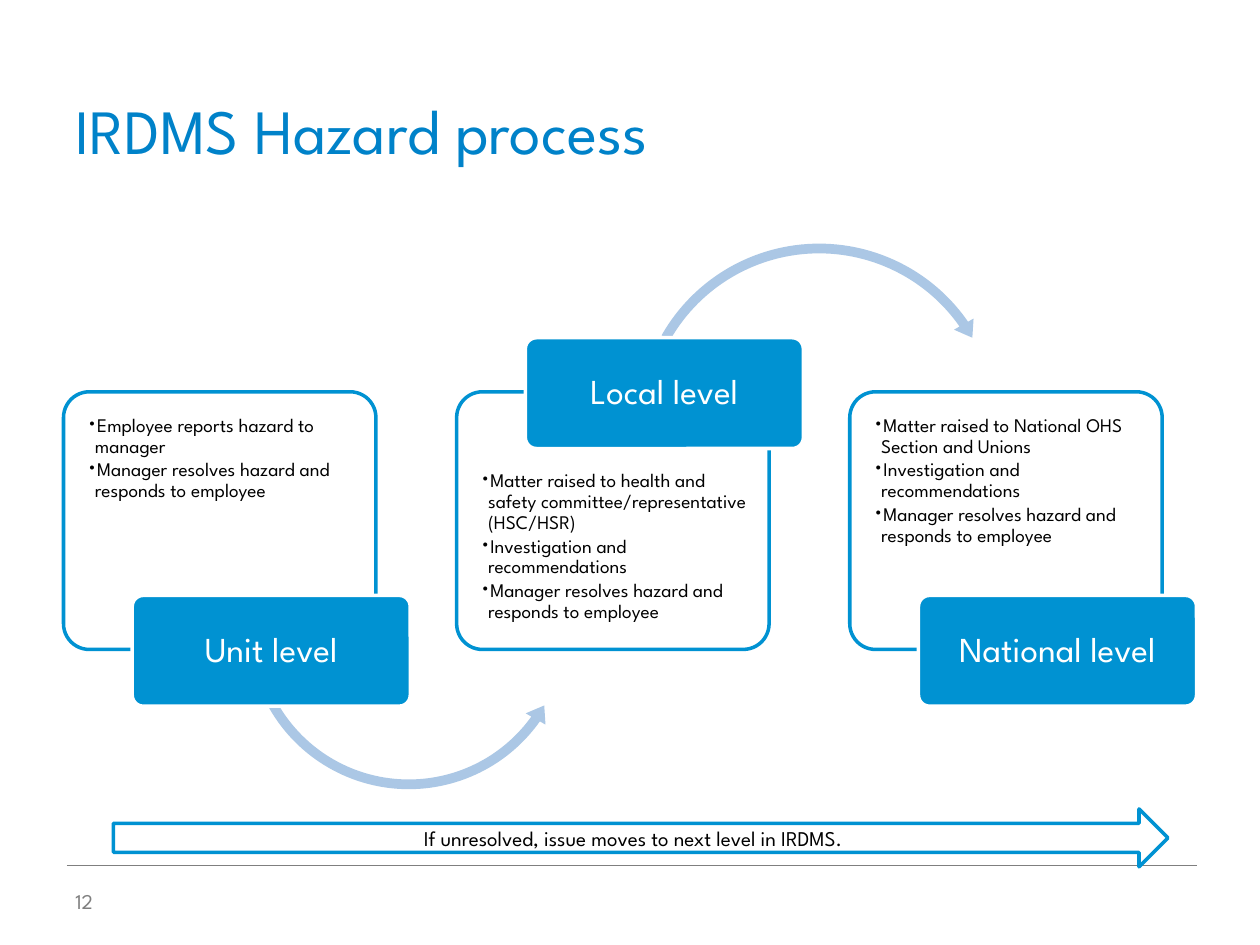
from collections import namedtuple

from lxml.etree import SubElement
from pptx import Presentation
from pptx.dml.color import RGBColor
from pptx.enum.shapes import MSO_CONNECTOR, MSO_SHAPE as Shape
from pptx.enum.text import MSO_ANCHOR as Anchor, PP_ALIGN as Align
from pptx.oxml.ns import qn
from pptx.util import Inches, Pt

COLORS = {
    "title": "0082C9", "blue": "0092D2", "arc": "ABC7E5",
    "white": "FFFFFF", "black": "000000", "grey": "7F7F7F",
}
FONT = "League Spartan"
CELL = Inches(0.1)  # the slide is a grid of 100 columns by 75 rows

Box = namedtuple("Box", "left top width height")
Arc = namedtuple("Arc", "shape left top size adjustments")
Stage = namedtuple("Stage", "name steps label_on_top arc")

UP_ARC = Arc(Shape.LEFT_CIRCULAR_ARROW, 0.57, 0.27, 1.07,
             (0.029, 3.532, 21.287, 90.245, 0.034))
DOWN_ARC = Arc(Shape.CIRCULAR_ARROW, 0.56, -0.6, 1.2,
               (0.026, 3.134, 195.111, 125.755, 0.03))
INVESTIGATE = "Investigation and recommendations"
RESOLVE = "Manager resolves hazard and responds to employee"
STAGES = [
    Stage("Unit level", ["Employee reports hazard to manager", RESOLVE], False, UP_ARC),
    Stage("Local level",
          ["Matter raised to health and safety committee/representative (HSC/HSR)",
           INVESTIGATE, RESOLVE], True, DOWN_ARC),
    Stage("National level",
          ["Matter raised to National OHS Section and Unions", INVESTIGATE, RESOLVE],
          False, None),
]


def rgb(name):
    return RGBColor.from_string(COLORS[name])


def in_cells(box):
    return [round(value * CELL) for value in box]


def within(box, left, top, width, height):
    """Return the part of a box given by shares of its size."""
    return Box(box.left + left * box.width, box.top + top * box.height,
               width * box.width, height * box.height)


def style(paragraph, size, color, align=Align.LEFT):
    paragraph.alignment = align
    paragraph.font.name = FONT
    paragraph.font.size = Pt(size)
    paragraph.font.color.rgb = rgb(color)


def set_insets(frame, left, top, right, bottom):
    frame.margin_left, frame.margin_top = Inches(left), Inches(top)
    frame.margin_right, frame.margin_bottom = Inches(right), Inches(bottom)


def add_text(slide, box, text, size, color, anchor):
    frame = slide.shapes.add_textbox(*in_cells(box)).text_frame
    frame.word_wrap = True
    frame.vertical_anchor = anchor
    frame.text = text
    style(frame.paragraphs[0], size, color)


def add_block(slide, shape_type, box, fill, line=None):
    block = slide.shapes.add_shape(shape_type, *in_cells(box))
    block.shadow.inherit = False
    block.fill.solid()
    block.fill.fore_color.rgb = rgb(fill)
    if line:
        block.line.color.rgb = rgb(line)
        block.line.width = Pt(2)
    else:
        block.line.fill.background()
    return block


def add_rounded(slide, box, fill, line):
    block = add_block(slide, Shape.ROUNDED_RECTANGLE, box, fill, line)
    block.adjustments[0] = 0.1
    return block


def add_bullet(paragraph):
    properties = paragraph._p.get_or_add_pPr()
    properties.set("marL", str(Inches(0.06)))
    properties.set("indent", str(-Inches(0.06)))
    SubElement(properties, qn("a:buFont"), typeface=FONT)
    SubElement(properties, qn("a:buChar"), char="•")


def add_card(slide, box, steps, top_inset):
    card = add_rounded(slide, box, "white", "blue")
    frame = card.text_frame
    frame.vertical_anchor = Anchor.TOP
    set_insets(frame, 0.13, top_inset, 0.08, 0.08)
    frame.text = "\n".join(steps)
    for paragraph in frame.paragraphs:
        add_bullet(paragraph)
        paragraph.line_spacing = 0.9
        paragraph.space_after = Pt(1.65)
        style(paragraph, 11, "black")


def add_arc(slide, card_box, arc):
    box = within(card_box, arc.left, arc.top, arc.size, 1)
    arrow = add_block(slide, arc.shape, box._replace(height=box.width), "arc")
    for index, value in enumerate(arc.adjustments):
        arrow.adjustments[index] = value


def add_label(slide, box, name):
    label = add_rounded(slide, box, "blue", "white")
    frame = label.text_frame
    frame.vertical_anchor = Anchor.MIDDLE
    set_insets(frame, 0.04, 0.03, 0.04, 0.03)
    frame.text = name
    frame.paragraphs[0].line_spacing = 0.9
    style(frame.paragraphs[0], 20, "white", Align.CENTER)


def add_stage(slide, box, stage):
    """Place a card, the arc to the next stage and the label on the card's edge."""
    add_card(slide, box, stage.steps, 0.57 if stage.label_on_top else 0.13)
    if stage.arc:
        add_arc(slide, box, stage.arc)
    label_top = -0.21 if stage.label_on_top else 0.79
    add_label(slide, within(box, 0.22, label_top, 0.89, 0.43), stage.name)


def add_process(slide, box):
    pitch = (box.width - 24.8) / (len(STAGES) - 1)
    for index, stage in enumerate(STAGES):
        card_box = Box(box.left + index * pitch, box.top, 24.8, box.height)
        add_stage(slide, card_box, stage)


def add_escalation_arrow(slide, box):
    arrow = add_block(slide, Shape.RIGHT_ARROW, box, "white", "blue")
    frame = arrow.text_frame
    frame.vertical_anchor = Anchor.MIDDLE
    frame.text = "If unresolved, issue moves to next level in IRDMS."
    style(frame.paragraphs[0], 12, "black", Align.CENTER)


def add_footer_rule(slide, left, right, top):
    rule = slide.shapes.add_connector(
        MSO_CONNECTOR.STRAIGHT, *in_cells((left, top, right, top)))
    rule.line.color.rgb = rgb("grey")
    rule.line.width = Pt(0.25)
    SubElement(rule._element.spPr, qn("a:effectLst"))


def main():
    deck = Presentation()
    deck.slide_width, deck.slide_height = 100 * CELL, 75 * CELL
    slide = deck.slides.add_slide(deck.slide_layouts[6])
    add_footer_rule(slide, 5.3, 95, 68.65)
    add_text(slide, Box(5, 3, 90, 10.75), "IRDMS Hazard process", 36, "title", Anchor.BOTTOM)
    add_process(slide, Box(5.04, 31.1, 87.2, 20.45))
    add_text(slide, Box(5, 69.5, 10.7, 4), "12", 12, "grey", Anchor.MIDDLE)
    add_escalation_arrow(slide, Box(9, 64.2, 83.7, 4.6))
    deck.save("out.pptx")


if __name__ == "__main__":
    main()
